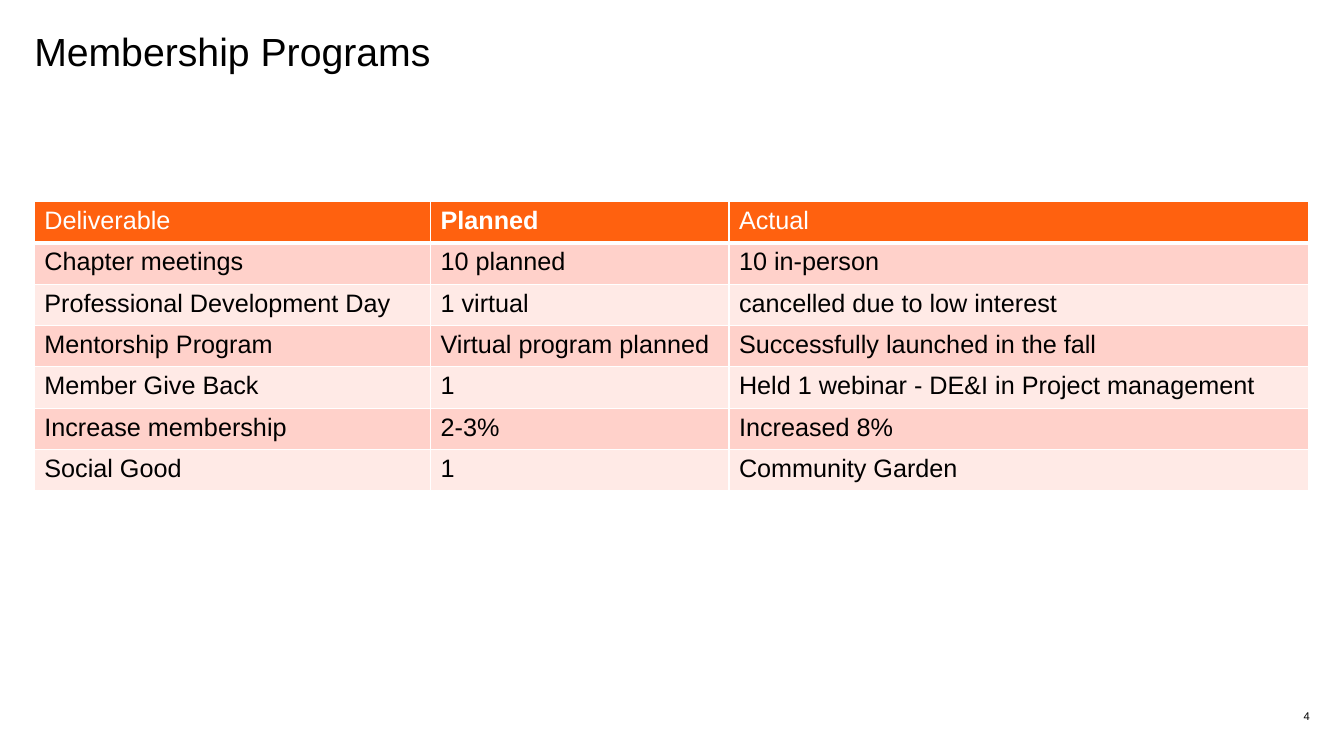
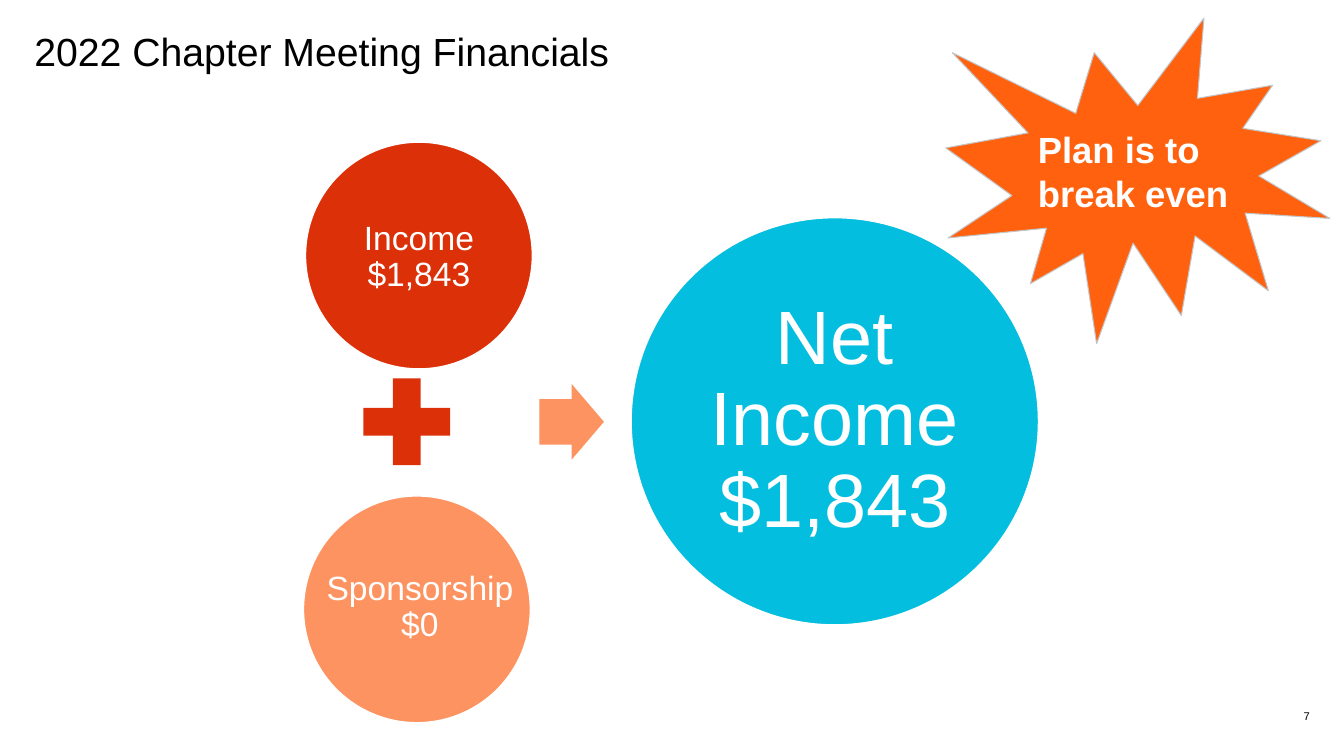
from pptx import Presentation
from pptx.dml.color import RGBColor
from pptx.enum.shapes import MSO_SHAPE as Shape
from pptx.enum.text import MSO_ANCHOR as Anchor, PP_ALIGN as Align
from pptx.oxml.ns import qn
from pptx.util import Inches, Pt
from lxml.etree import SubElement

FONT = "Arial"
BLACK = RGBColor(0x00, 0x00, 0x00)
WHITE = RGBColor(0xFF, 0xFF, 0xFF)
ORANGE = RGBColor(0xFF, 0x61, 0x0F)
RED = RGBColor(0xDC, 0x30, 0x09)
PEACH = RGBColor(0xFD, 0x93, 0x60)
CYAN = RGBColor(0x03, 0xBE, 0xDF)
GREY = RGBColor(0xC4, 0xC5, 0xC7)
ROW_TINTS = (RGBColor(0xFF, 0xD1, 0xCA), RGBColor(0xFF, 0xEA, 0xE6))

MARGIN = 0.34
ROW_HEIGHT = 0.41
COLUMN_WIDTHS = (3.93, 2.96, 5.75)

PROGRAMS = [
    ("Deliverable", "Planned", "Actual"),
    ("Chapter meetings", "10 planned", "10 in-person"),
    ("Professional Development Day", "1 virtual", "cancelled due to low interest"),
    ("Mentorship Program", "Virtual program planned", "Successfully launched in the fall"),
    ("Member Give Back", "1", "Held 1 webinar - DE&I in Project management"),
    ("Increase membership", "2-3%", "Increased 8%"),
    ("Social Good", "1", "Community Garden"),
]

# Circle position, colour, label position and label text
SOURCES = [
    ((3.03, 1.41), RED, (3.0, 1.84), "Income\n$1,843"),
    ((3.01, 4.92), PEACH, (3.01, 5.31), "Sponsorship $0"),
]
SOURCE_SIZE = 2.25
LABEL_SIZE = (2.31, 1.43)


def write(frame, text, size, color, bold=False, align=Align.LEFT,
          anchor=Anchor.MIDDLE, inset=0.0, spacing=None):
    frame.word_wrap = True
    frame.vertical_anchor = anchor
    frame.margin_left = frame.margin_right = Inches(inset)
    frame.margin_top = frame.margin_bottom = Inches(inset)
    frame.text = text
    for paragraph in frame.paragraphs:
        paragraph.alignment = align
        paragraph.line_spacing = spacing
        for run in paragraph.runs:
            run.font.name = FONT
            run.font.size = Pt(size)
            run.font.bold = bold
            run.font.color.rgb = color


def add_text(slide, box, text, size, color, **style):
    label = slide.shapes.add_textbox(*map(Inches, box))
    write(label.text_frame, text, size, color, **style)


def add_figure(slide, preset, box, fill, line=None, line_width=1, adjustments=()):
    figure = slide.shapes.add_shape(preset, *map(Inches, box))
    figure.shadow.inherit = False
    figure.fill.solid()
    figure.fill.fore_color.rgb = fill
    if line is None:
        figure.line.fill.background()
    else:
        figure.line.color.rgb = line
        figure.line.width = Pt(line_width)
    for index, value in enumerate(adjustments):
        figure.adjustments[index] = value
    return figure


def add_page(prs, title, number):
    slide = prs.slides.add_slide(prs.slide_layouts[6])
    add_text(slide, (MARGIN, 0.33, 12.64, 0.41), title, 28, BLACK, spacing=0.9)
    add_text(slide, (12.54, 6.95, 0.45, 0.22), str(number), 8, BLACK,
             align=Align.RIGHT, anchor=Anchor.BOTTOM)
    return slide


def set_borders(cell, **widths):
    properties = cell._tc.get_or_add_tcPr()
    for side in "LRTB":
        width = Pt(widths.get(side, 1))
        border = SubElement(properties, qn(f"a:ln{side}"), w=str(width))
        fill = SubElement(border, qn("a:solidFill"))
        SubElement(fill, qn("a:srgbClr"), val=str(WHITE))


def build_programs(prs):
    slide = add_page(prs, "Membership Programs", 4)
    box = (MARGIN, 2, sum(COLUMN_WIDTHS), ROW_HEIGHT * len(PROGRAMS))
    table = slide.shapes.add_table(
        len(PROGRAMS), len(COLUMN_WIDTHS), *map(Inches, box)).table
    for column, width in zip(table.columns, COLUMN_WIDTHS):
        column.width = Inches(width)
    for r, entries in enumerate(PROGRAMS):
        table.rows[r].height = Inches(ROW_HEIGHT)
        header = r == 0
        for c, entry in enumerate(entries):
            cell = table.cell(r, c)
            # The header is ruled off by a thicker line
            set_borders(cell, B=3 if header else 1, T=3 if r == 1 else 1)
            cell.fill.solid()
            cell.fill.fore_color.rgb = ORANGE if header else ROW_TINTS[(r - 1) % 2]
            cell.margin_left = cell.margin_right = Inches(0.1)
            cell.margin_top = cell.margin_bottom = Inches(0.05)
            cell.text = entry
            font = cell.text_frame.paragraphs[0].runs[0].font
            font.name = FONT
            font.size = Pt(18)
            font.bold = entry == "Planned"
            font.color.rgb = WHITE if header else BLACK


def build_financials(prs):
    slide = add_page(prs, "2022 Chapter Meeting Financials", 7)

    # Money coming in
    for place, color, label_place, label in SOURCES:
        add_figure(slide, Shape.OVAL, (*place, SOURCE_SIZE, SOURCE_SIZE), color, WHITE)
        add_text(slide, (*label_place, *LABEL_SIZE), label, 24, WHITE,
                 align=Align.CENTER, inset=0.02, spacing=0.9)

    # Operators
    add_figure(slide, Shape.MATH_PLUS, (3.45, 3.6, 1.17, 1.17), RED,
               adjustments=(0.235,))
    add_figure(slide, Shape.RIGHT_ARROW, (5.35, 3.81, 0.64, 0.75), PEACH,
               adjustments=(0.6, 0.5))

    # Result
    net_income = add_figure(slide, Shape.OVAL, (6.26, 2.16, 4.04, 4.04), CYAN, WHITE)
    write(net_income.text_frame, "Net Income $1,843", 54, WHITE,
          align=Align.CENTER, inset=0.08, spacing=0.9)

    # Goal callout
    goal = add_figure(slide, Shape.EXPLOSION1, (9.38, 0.18, 3.81, 3.23),
                      ORANGE, GREY, 0.75)
    write(goal.text_frame, "Plan is to break even", 26, WHITE, bold=True, inset=0.1)


def main():
    prs = Presentation()
    prs.slide_width = Inches(13.33)
    prs.slide_height = Inches(7.5)
    build_programs(prs)
    build_financials(prs)
    prs.save("out.pptx")


if __name__ == "__main__":
    main()
